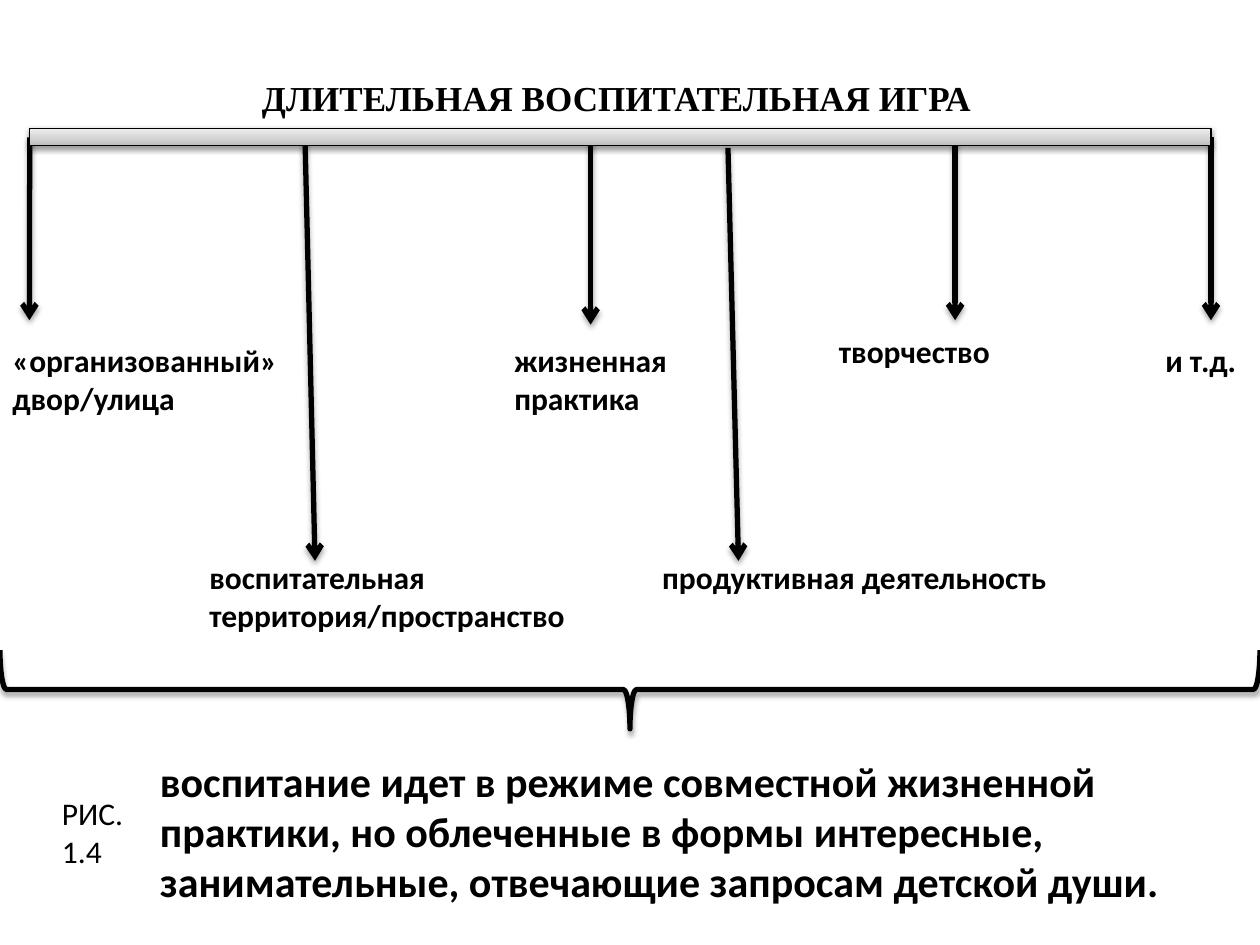
"""Build the slide about the long educational game and its branches."""
import dataclasses

import lxml.etree
import pptx
import pptx.dml.color
import pptx.enum.shapes
import pptx.enum.text
import pptx.oxml
import pptx.oxml.ns
import pptx.util

COLORS = {"ink": "000000", "paper": "FFFFFF", "dark": "BDBDBD", "middle": "D1D1D1", "light": "EEEEEE"}
BAR_STOPS = ((0, "dark"), (35, "middle"), (100, "light"))
NAMESPACE = pptx.oxml.ns.nsdecls("a")
ARROW_START = 78.5
SHORT_END = 183


@dataclasses.dataclass(frozen=True)
class Box:
    left: float
    top: float
    width: float
    height: float

    def lengths(self) -> tuple:
        """Return the four lengths as points."""
        return tuple(pptx.util.Pt(value) for value in (self.left, self.top, self.width, self.height))


@dataclasses.dataclass(frozen=True)
class Arrow:
    start_x: float
    end_x: float
    end_y: float = SHORT_END
    start_y: float = ARROW_START


@dataclasses.dataclass(frozen=True)
class Label:
    text: str
    box: Box


ARROWS = (
    Arrow(17, 16.8),
    Arrow(692, 692),
    Arrow(174.3, 180, 320.5),
    Arrow(545.8, 545.8),
    Arrow(337.5, 337.5, 185.5),
    Arrow(416, 422, 320.5, 84.5),
)

LABELS = (
    Label("«организованный»\nдвор/улица", Box(0, 191.5, 171.5, 51)),
    Label("воспитательная\nтерритория/пространство", Box(112.5, 315.5, 219.5, 51)),
    Label("жизненная\nпрактика", Box(286.8, 191.5, 103, 51)),
    Label("продуктивная деятельность", Box(371.3, 315.5, 237.5, 29)),
    Label("творчество", Box(472.3, 186, 101.5, 29)),
    Label("и т.д.", Box(658.8, 191.5, 55.5, 29)),
)


def color(name: str) -> pptx.dml.color.RGBColor:
    """Return a palette colour."""
    return pptx.dml.color.RGBColor.from_string(COLORS[name])


def write_text(shape, text: str, *, size: float = 18, bold: bool = True, font: str = "Calibri",
               wrap: bool = False, align=pptx.enum.text.PP_ALIGN.LEFT,
               anchor=pptx.enum.text.MSO_ANCHOR.TOP) -> None:
    """Fill a shape with one formatted paragraph, breaking it at newlines."""
    frame = shape.text_frame
    frame.word_wrap = wrap
    frame.auto_size = pptx.enum.text.MSO_AUTO_SIZE.SHAPE_TO_FIT_TEXT
    frame.vertical_anchor = anchor
    paragraph = frame.paragraphs[0]
    paragraph.alignment = align
    for index, line in enumerate(text.split("\n")):
        if index:
            paragraph.add_line_break()
        run = paragraph.add_run()
        run.text = line
        run.font.size = pptx.util.Pt(size)
        run.font.bold = bold
        run.font.name = font
        run.font.color.rgb = color("ink")


def add_label(slide, text: str, box: Box, **text_format) -> None:
    """Add a text box with the given format."""
    write_text(slide.shapes.add_textbox(*box.lengths()), text, **text_format)


def style_outline(shape, width: float, opacity: int = 35, distance: float = 1.8) -> None:
    """Give a shape a black line and a soft shadow below it."""
    shape.line.color.rgb = color("ink")
    shape.line.width = pptx.util.Pt(width)
    blur, offset = pptx.util.Pt(3.1), pptx.util.Pt(distance)
    shape._element.spPr.append(pptx.oxml.parse_xml(
        f'<a:effectLst {NAMESPACE}><a:outerShdw blurRad="{blur}" dist="{offset}" dir="5400000" '
        f'rotWithShape="0"><a:srgbClr val="{COLORS["ink"]}"><a:alpha val="{opacity * 1000}"/>'
        "</a:srgbClr></a:outerShdw></a:effectLst>"))


def add_arrow(slide, arrow: Arrow) -> None:
    """Draw one arrow leading down from the bar."""
    ends = (arrow.start_x, arrow.start_y, arrow.end_x, arrow.end_y)
    connector = slide.shapes.add_connector(
        pptx.enum.shapes.MSO_CONNECTOR.STRAIGHT, *(pptx.util.Pt(value) for value in ends))
    style_outline(connector, 3)
    lxml.etree.SubElement(connector.line._get_or_add_ln(), pptx.oxml.ns.qn("a:tailEnd"), type="arrow")


def add_bar(slide, box: Box) -> None:
    """Draw the bar with its grey gradient."""
    bar = slide.shapes.add_shape(pptx.enum.shapes.MSO_SHAPE.RECTANGLE, *box.lengths())
    stops = "".join(f'<a:gs pos="{position * 1000}"><a:srgbClr val="{COLORS[name]}"/></a:gs>'
                    for position, name in BAR_STOPS)
    gradient = pptx.oxml.parse_xml(
        f'<a:gradFill {NAMESPACE} rotWithShape="1"><a:gsLst>{stops}</a:gsLst>'
        '<a:lin ang="16200000" scaled="0"/></a:gradFill>')
    bar._element.spPr.find(pptx.oxml.ns.qn("a:prstGeom")).addnext(gradient)
    style_outline(bar, 0.75, opacity=38, distance=1.6)


def add_brace(slide, box: Box) -> None:
    """Draw the brace turned to point down."""
    brace = slide.shapes.add_shape(pptx.enum.shapes.MSO_SHAPE.LEFT_BRACE, *box.lengths())
    brace.rotation = 270
    brace.fill.background()
    style_outline(brace, 3)


def main() -> None:
    """Build and save the presentation."""
    presentation = pptx.Presentation()
    presentation.slide_width, presentation.slide_height = pptx.util.Pt(720), pptx.util.Pt(540)
    slide = presentation.slides.add_slide(presentation.slide_layouts[5])
    slide.background.fill.solid()
    slide.background.fill.fore_color.rgb = color("paper")

    title = slide.shapes.title
    title.left, title.top, title.width, title.height = Box(140.5, 39.75, 423.5, 31.5).lengths()
    write_text(title, "ДЛИТЕЛЬНАЯ ВОСПИТАТЕЛЬНАЯ ИГРА", size=20, font="Times New Roman",
               align=pptx.enum.text.PP_ALIGN.CENTER, anchor=pptx.enum.text.MSO_ANCHOR.MIDDLE)

    for arrow in ARROWS:
        add_arrow(slide, arrow)
    for label in LABELS:
        add_label(slide, label.text, label.box)
    add_label(slide, "РИС.\n1.4", Box(28.3, 450, 62, 51), bold=False, wrap=True)
    add_bar(slide, Box(16.8, 73.3, 675.2, 10))
    add_brace(slide, Box(337.5, 34, 45, 720))
    add_label(slide, "воспитание идет в режиме совместной жизненной практики, но облеченные в формы "
              "интересные, занимательные, отвечающие запросам детской души.",
              Box(84.3, 428, 602, 94.5), size=24, wrap=True)
    presentation.save("out.pptx")


if __name__ == "__main__":
    main()
